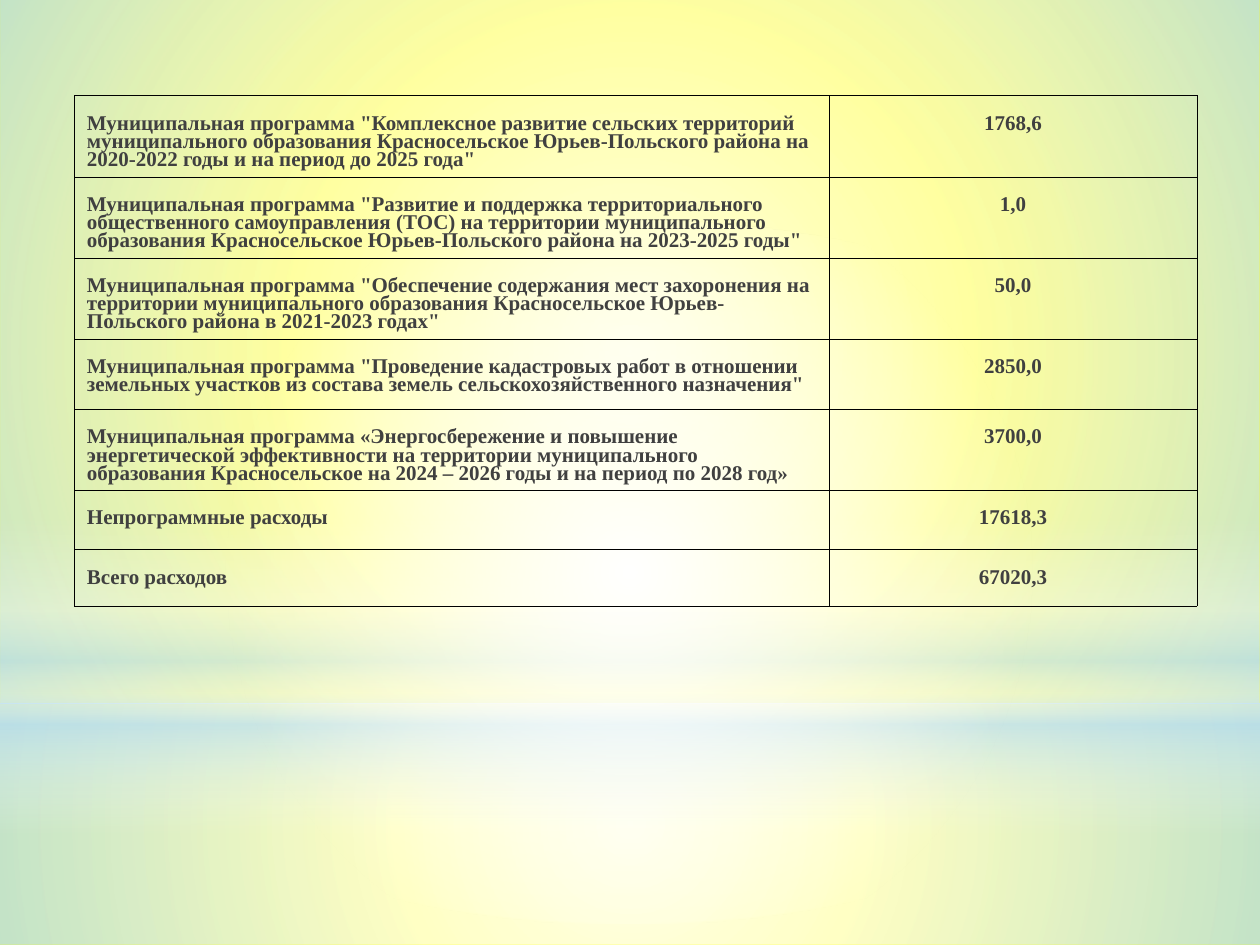
from typing import NamedTuple, Optional

import pptx
import pptx.dml.color
import pptx.enum.shapes
import pptx.enum.text
import pptx.oxml
import pptx.oxml.ns
import pptx.util

Pt = pptx.util.Pt
MSO_SHAPE = pptx.enum.shapes.MSO_SHAPE
PP_ALIGN = pptx.enum.text.PP_ALIGN
NS = pptx.oxml.ns.nsdecls("a")

COLORS = {
    "background": "FFFF00",
    "white": "FFFFFF",
    "sky": "B4DCFA",
    "text": "404040",
    "border": "000000",
}


class Stop(NamedTuple):
    position: int
    color: str
    opacity: int


class Glow(NamedTuple):
    kind: int
    left: float
    top: float
    width: float
    height: float
    stops: list[Stop]
    angle: Optional[int] = None  # None means radial


class Expense(NamedTuple):
    name: str
    amount: str
    height: float


GLOWS = [
    Glow(MSO_SHAPE.RECTANGLE, 0, 401.8, 720, 138.2,
         [Stop(0, "white", 91), Stop(37, "white", 76), Stop(100, "sky", 79)]),
    Glow(MSO_SHAPE.RECTANGLE, 0, 0, 720, 401.8,
         [Stop(0, "white", 89), Stop(48, "white", 62), Stop(100, "sky", 79)]),
    Glow(MSO_SHAPE.RECTANGLE, 0, 296.6, 720, 180,
         [Stop(0, "white", 0), Stop(29, "white", 30), Stop(45, "sky", 40),
          Stop(55, "white", 26), Stop(65, "sky", 60), Stop(100, "white", 0)], 90),
    Glow(MSO_SHAPE.OVAL, 0, 126, 720, 401.8,
         [Stop(0, "white", 100), Stop(56, "white", 0)]),
]

EXPENSES = [
    Expense('Муниципальная программа "Комплексное развитие сельских территорий '
            'муниципального образования Красносельское Юрьев-Польского района на '
            '2020-2022 годы и на период до 2025 года"', "1768,6", 39),
    Expense('Муниципальная программа "Развитие и поддержка территориального '
            'общественного самоуправления (ТОС) на территории муниципального '
            'образования Красносельское Юрьев-Польского района на 2023-2025 годы"',
            "1,0", 39),
    Expense('Муниципальная программа "Обеспечение содержания мест захоронения на '
            'территории муниципального образования Красносельское Юрьев-Польского '
            'района в 2021-2023 годах"', "50,0", 40.3),
    Expense('Муниципальная программа "Проведение кадастровых работ в отношении '
            'земельных участков из состава земель сельскохозяйственного назначения"',
            "2850,0", 40.3),
    Expense('Муниципальная программа «Энергосбережение и повышение энергетической '
            'эффективности на территории муниципального образования Красносельское '
            'на 2024 – 2026 годы и на период по 2028 год»', "3700,0", 40.3),
    Expense("Непрограммные расходы", "17618,3", 33.8),
    Expense("Всего расходов", "67020,3", 32.4),
]

TABLE_LEFT, TABLE_TOP = 42.5, 54.6
COLUMN_WIDTHS = (431.3, 210.2)
BORDER_WIDTH = Pt(0.06)
TABLE_FORMAT = {"first_row": False, "horz_banding": False}
CELL_FORMAT = {"margin_left": Pt(7.2), "margin_right": Pt(7.2),
               "margin_top": Pt(11.5), "margin_bottom": Pt(3.6)}
FONT_FORMAT = {"name": "Times New Roman", "size": Pt(12), "bold": True}


def rgb(name: str) -> pptx.dml.color.RGBColor:
    return pptx.dml.color.RGBColor.from_string(COLORS[name])


def apply_format(target: object, values: dict) -> None:
    for name, value in values.items():
        setattr(target, name, value)


def gradient_xml(glow: Glow) -> str:
    stops = "".join(
        f'<a:gs pos="{stop.position * 1000}"><a:srgbClr val="{COLORS[stop.color]}">'
        f'<a:alpha val="{stop.opacity * 1000}"/></a:srgbClr></a:gs>'
        for stop in glow.stops)
    if glow.angle is None:
        direction = ('<a:path path="circle"><a:fillToRect l="50000" t="50000" '
                     'r="50000" b="50000"/></a:path>')
    else:
        direction = f'<a:lin ang="{glow.angle * 60000}" scaled="0"/>'
    return f"<a:gradFill {NS}><a:gsLst>{stops}</a:gsLst>{direction}</a:gradFill>"


def add_glow(slide: pptx.slide.Slide, glow: Glow) -> None:
    s = slide.shapes.add_shape(glow.kind, Pt(glow.left), Pt(glow.top),
                               Pt(glow.width), Pt(glow.height))
    s.shadow.inherit = False
    s.line.fill.background()
    s.fill.background()
    props = s._element.spPr
    props.replace(props.find(pptx.oxml.ns.qn("a:noFill")),
                  pptx.oxml.parse_xml(gradient_xml(glow)))


def add_borders(cell: pptx.table._Cell) -> None:
    props = cell._tc.get_or_add_tcPr()
    for side in ("lnL", "lnR", "lnT", "lnB"):
        props.append(pptx.oxml.parse_xml(
            f'<a:{side} {NS} w="{BORDER_WIDTH}"><a:solidFill>'
            f'<a:srgbClr val="{COLORS["border"]}"/></a:solidFill></a:{side}>'))


def fill_cell(cell: pptx.table._Cell, text: str, align: PP_ALIGN) -> None:
    apply_format(cell, CELL_FORMAT)
    add_borders(cell)
    cell.fill.background()
    p = cell.text_frame.paragraphs[0]
    apply_format(p, {"alignment": align, "line_spacing": 0.78})
    r = p.add_run()
    r.text = text
    apply_format(r.font, FONT_FORMAT)
    r.font.color.rgb = rgb("text")


def add_expense_table(slide: pptx.slide.Slide, expenses: list[Expense]) -> None:
    frame = slide.shapes.add_table(
        len(expenses), len(COLUMN_WIDTHS), Pt(TABLE_LEFT), Pt(TABLE_TOP),
        Pt(sum(COLUMN_WIDTHS)), Pt(sum(e.height for e in expenses)))
    table = frame.table
    apply_format(table, TABLE_FORMAT)
    for column, width in zip(table.columns, COLUMN_WIDTHS):
        column.width = Pt(width)
    for row, expense in zip(table.rows, expenses):
        row.height = Pt(expense.height)
        fill_cell(row.cells[0], expense.name, PP_ALIGN.LEFT)
        fill_cell(row.cells[1], expense.amount, PP_ALIGN.CENTER)


def main() -> None:
    prs = pptx.Presentation()
    prs.slide_width, prs.slide_height = Pt(720), Pt(540)
    slide = prs.slides.add_slide(prs.slide_layouts[6])

    # Yellow background with soft light over it
    slide.background.fill.solid()
    slide.background.fill.fore_color.rgb = rgb("background")
    for glow in GLOWS:
        add_glow(slide, glow)

    # Expenses by programme
    add_expense_table(slide, EXPENSES)
    prs.save("out.pptx")


if __name__ == "__main__":
    main()
